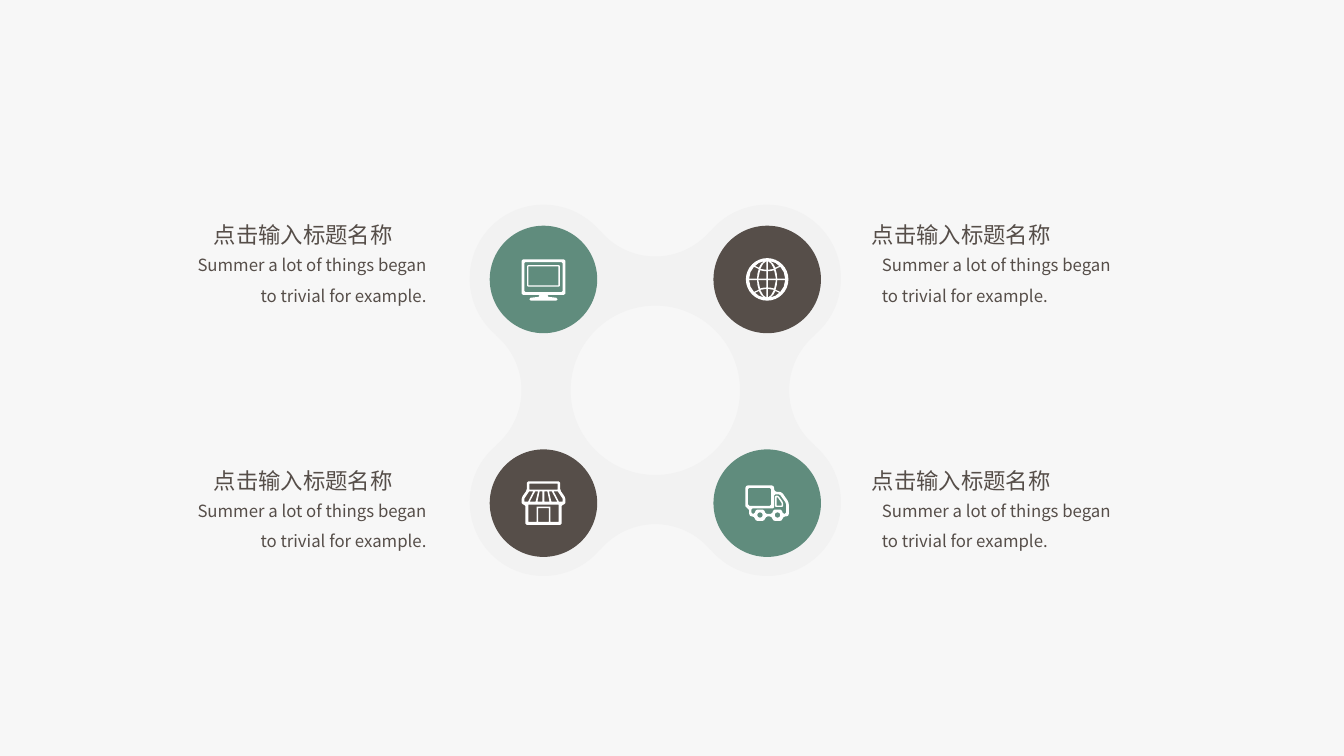
from dataclasses import dataclass
from math import cos, hypot, radians, sin, tan

from pptx import Presentation
from pptx.dml.color import RGBColor
from pptx.enum.shapes import MSO_SHAPE
from pptx.enum.text import MSO_ANCHOR, MSO_AUTO_SIZE, PP_ALIGN
from pptx.oxml.ns import qn
from pptx.util import Pt
from lxml.etree import SubElement


@dataclass(frozen=True)
class Theme:
    background: str = "F7F7F7"
    frame: str = "F2F2F2"
    green: str = "608C7D"
    brown: str = "564E49"
    icon: str = "FFFFFF"
    heading_font: str = "Noto Sans CJK SC"
    body_font: str = "Noto Sans CJK TC"
    heading_size: float = 16
    body_size: float = 12


def box(left, top, right, bottom, radius=0.0):
    return [(left, top), (right, top), (right, bottom), (left, bottom)], radius


def disc(x, y, radius):
    return box(x - radius, y - radius, x + radius, y + radius, radius)


def mirror(half):
    """Close a right-hand outline with its reflection."""
    return half + [(-x, y) for x, y in reversed(half)]


THEME = Theme()
HEADING = "点击输入标题名称"
BODY = "Summer a lot of things began to trivial for example."

# An icon is a list of outlines, an outline a list of contours (corners, corner radius),
# in points from the middle of the disc; a contour inside another one is a hole.
MONITOR = [
    [box(-11.7, -10.3, 11.7, 5.2, 0.7), box(-10.7, -9.3, 10.7, 4.2)],
    [(mirror([(15.6, -14.3), (15.6, 11), (2.9, 11), (2.9, 12.4),
              (10.1, 13.2), (10.1, 15.1)]), 1),
     box(-13.6, -12.4, 13.6, 9.1, 0.7)],
]
GLOBE_CELLS = [
    [(0.5, 0.5), (6.3, 0.5), (5, 6.5), (2.8, 6), (0.5, 5.8)],
    [(7.2, 0.5), (12.9, 0.5), (11.9, 5.2), (9.4, 9), (6, 7.4), (6.9, 4)],
    [(0.5, 13), (0.5, 6.8), (4.9, 7.5), (2.8, 11.3)],
    [(5.9, 8.3), (8.6, 9.6), (6, 11.7), (2.4, 12.9), (4.4, 11)],
]
GLOBE = [[disc(0, 0, 15.2)] + [
    ([(across * x, down * y) for x, y in cell], 0)
    for across in (-1, 1) for down in (-1, 1) for cell in GLOBE_CELLS
]]
SLATS = [
    [(0.7, -8.3), (2.8, -8.3), (4.3, -1.1), (0.7, -1.1)],
    [(3.9, -8.3), (6, -8.3), (9.8, -1.1), (5.6, -1.1)],
    [(7.3, -8.3), (10.3, -8.3), (13.7, -3.2), (13.7, -1.1), (11, -1.1)],
]
SHOP = [[
    (mirror([(11.9, -15.5), (11.9, -9.2), (15.6, -4), (15.6, 1), (13, 1), (13, 15.5)]), 1),
    box(-10.1, -13.9, 10.1, -9.6),
    (mirror([(10.8, 1), (10.8, 13.4), (4.9, 13.4), (4.9, 2.5)]), 0),
    box(-3.8, 3.6, 3.8, 13.4),
] + [([(side * x, y) for x, y in slat], 0) for side in (-1, 1) for slat in SLATS]]
TRUCK = [
    [([(5.5, -5.3), (8, -5.3), (11.4, -0.5), (11.4, 2.7), (5.5, 2.7)], 0.7),
     ([(6.7, -4.1), (7.6, -4.1), (10.3, 0), (10.3, 1.8), (6.7, 1.8)], 0)],
    [([(-15.5, -12.7), (5, -12.7), (5, -8.1), (10.3, -8.1), (15.5, -0.5), (15.5, 9.5),
       (11.3, 9.5), (10.8, 12.7), (4, 12.7), (3.5, 9.5), (-1.2, 9.5), (-1.7, 12.7),
       (-8.5, 12.7), (-9, 9.5), (-12.8, 9.5), (-12.8, 3.6), (-15.5, 3.6)], 1.8),
     box(-13.7, -10.9, 2.9, 1.9, 1),
     ([(-11.2, 3.7), (5, 3.7), (5, -6.3), (9, -6.3), (13.5, 0), (13.5, 7.6), (11.3, 7.6),
       (10.3, 4.7), (4.5, 4.7), (3.5, 7.6), (-1.2, 7.6), (-2.2, 4.7), (-8, 4.7),
       (-9, 7.6), (-11.2, 7.6)], 0.8),
     disc(-5.1, 8.5, 2), disc(7.4, 8.5, 2)],
]

# (column, row, disc colour, icon, heading, body)
ITEMS = [
    (-1, -1, THEME.green, MONITOR, HEADING, BODY),
    (1, -1, THEME.brown, GLOBE, HEADING, BODY),
    (-1, 1, THEME.brown, SHOP, HEADING, BODY),
    (1, 1, THEME.green, TRUCK, HEADING, BODY),
]

CENTRE_X, CENTRE_Y, DISC_CENTRE_Y = 468.1, 278.8, 279.5
DISC_OFFSET, DISC_RADIUS = 79.9, 38.4
LOBE_RADIUS, HOLE_RADIUS = 52.7, 60.5
WAIST_OFFSET, WAIST_RADIUS = 147, 51.4
JOIN_ANGLE = 40
TEXT_GAP = 175.6
HEADING_TOP, BODY_TOP = 154.1, 171.4
UNITS = 100


def rgb(colour):
    return RGBColor.from_string(colour)


def paint(shape, colour):
    shape.shadow.inherit = False
    shape.fill.solid()
    shape.fill.fore_color.rgb = rgb(colour)
    shape.line.fill.background()


def arc(x, y, radius, start, sweep, parts):
    """A line to the start of an arc, then its Bézier curves; clockwise if sweep > 0."""
    def at(angle):
        return x + radius * cos(angle), y + radius * sin(angle)

    step = radians(sweep / parts)
    pull = radius * 4 / 3 * tan(step / 4)
    segments = [[at(radians(start))]]
    for part in range(parts):
        begin = radians(start) + part * step
        end = begin + step
        (x1, y1), (x2, y2) = at(begin), at(end)
        segments.append([(x1 - pull * sin(begin), y1 + pull * cos(begin)),
                         (x2 + pull * sin(end), y2 - pull * cos(end)), (x2, y2)])
    return segments


def toward(start, end, distance):
    share = distance / hypot(end[0] - start[0], end[1] - start[1])
    return tuple(a + (b - a) * share for a, b in zip(start, end))


def rounded(corners, radius):
    """Lines between corners, each corner replaced by a curve."""
    segments = []
    for index, corner in enumerate(corners):
        before, after = corners[index - 1], corners[(index + 1) % len(corners)]
        cut = min([radius] + [hypot(corner[0] - x, corner[1] - y) / 2
                              for x, y in (before, after)])
        segments.append([toward(corner, before, cut)])
        if cut:
            segments.append([toward(corner, before, cut * 0.45),
                             toward(corner, after, cut * 0.45), toward(corner, after, cut)])
    return segments


def add_outline(shapes, contours, colour, x=0, y=0):
    """Draw contours of segments: one point is a line, three points are a curve."""
    builder = None
    for segments in contours:
        points = [((x + right) * UNITS, (y + down) * UNITS)
                  for segment in segments for right, down in segment]
        if builder is None:
            builder = shapes.build_freeform(*points[0], scale=Pt(1) / UNITS)
        else:
            builder.move_to(*points[0])
        builder.add_line_segments(points[1:], close=True)
    shape = builder.convert_to_shape()
    lines = shape._element.iter(qn("a:lnTo"))
    lines = iter(list(lines))
    for segments in contours:
        for segment in segments[1:]:
            curve = next(lines)
            if len(segment) == 3:
                curve.tag = qn("a:cubicBezTo")
                for _ in range(2):
                    extra = next(lines)
                    curve.append(extra[0])
                    extra.getparent().remove(extra)
    paint(shape, colour)


def add_frame(shapes):
    edge = []
    reach = DISC_OFFSET * 2 ** 0.5
    sweep = 270 - 2 * JOIN_ANGLE
    for turn in range(0, 360, 90):
        waist, lobe = radians(turn - 90), radians(turn - 45)
        edge += arc(CENTRE_X + WAIST_OFFSET * cos(waist), CENTRE_Y + WAIST_OFFSET * sin(waist),
                    WAIST_RADIUS, turn + 180 - JOIN_ANGLE, 2 * JOIN_ANGLE - 180, 2)
        edge += arc(CENTRE_X + reach * cos(lobe), CENTRE_Y + reach * sin(lobe),
                    LOBE_RADIUS, turn - 45 - sweep / 2, sweep, 4)
    hole = arc(CENTRE_X, CENTRE_Y, HOLE_RADIUS, 0, -360, 4)
    add_outline(shapes, [edge, hole], THEME.frame)


def add_text(shapes, text, place, font, size, align, frame_format):
    frame = shapes.add_textbox(*map(Pt, place)).text_frame
    for name, value in frame_format.items():
        setattr(frame, name, value)
    paragraph = frame.paragraphs[0]
    paragraph.alignment, paragraph.line_spacing = align, 1.5
    run = paragraph.add_run()
    run.text = text
    run.font.name, run.font.size = font, Pt(size)
    run.font.color.rgb = rgb(THEME.brown)
    SubElement(run._r.get_or_add_rPr(), qn("a:ea")).set("typeface", font)


def add_item(shapes, column, row, colour, icon, heading, body):
    x, y = CENTRE_X + column * DISC_OFFSET, DISC_CENTRE_Y + row * DISC_OFFSET
    group = shapes.add_group_shape().shapes
    paint(group.add_shape(MSO_SHAPE.OVAL, Pt(x - DISC_RADIUS), Pt(y - DISC_RADIUS),
                          Pt(2 * DISC_RADIUS), Pt(2 * DISC_RADIUS)), colour)
    for contours in icon:
        add_outline(group, [rounded(*contour) for contour in contours], THEME.icon, x, y)

    on_left = column < 0
    drop = TEXT_GAP if row > 0 else 0
    add_text(shapes, body, (126 if on_left else 622.8, BODY_TOP + drop, 185.8, 51.1),
             THEME.body_font, THEME.body_size, PP_ALIGN.RIGHT if on_left else PP_ALIGN.LEFT,
             {"word_wrap": True, "auto_size": MSO_AUTO_SIZE.SHAPE_TO_FIT_TEXT})
    margins = {f"margin_{side}": 0 for side in ("left", "top", "right", "bottom")}
    add_text(shapes, heading, (152.8 if on_left else 622.8, HEADING_TOP + drop, 159.1, 17.3),
             THEME.heading_font, THEME.heading_size,
             PP_ALIGN.JUSTIFY if on_left else PP_ALIGN.LEFT,
             {"word_wrap": True, "vertical_anchor": MSO_ANCHOR.MIDDLE, **margins})


deck = Presentation()
deck.slide_width, deck.slide_height = Pt(960), Pt(540)
slide = deck.slides.add_slide(deck.slide_layouts[6])
slide.background.fill.solid()
slide.background.fill.fore_color.rgb = rgb(THEME.background)
add_frame(slide.shapes)
for item in ITEMS:
    add_item(slide.shapes, *item)
deck.save("out.pptx")
